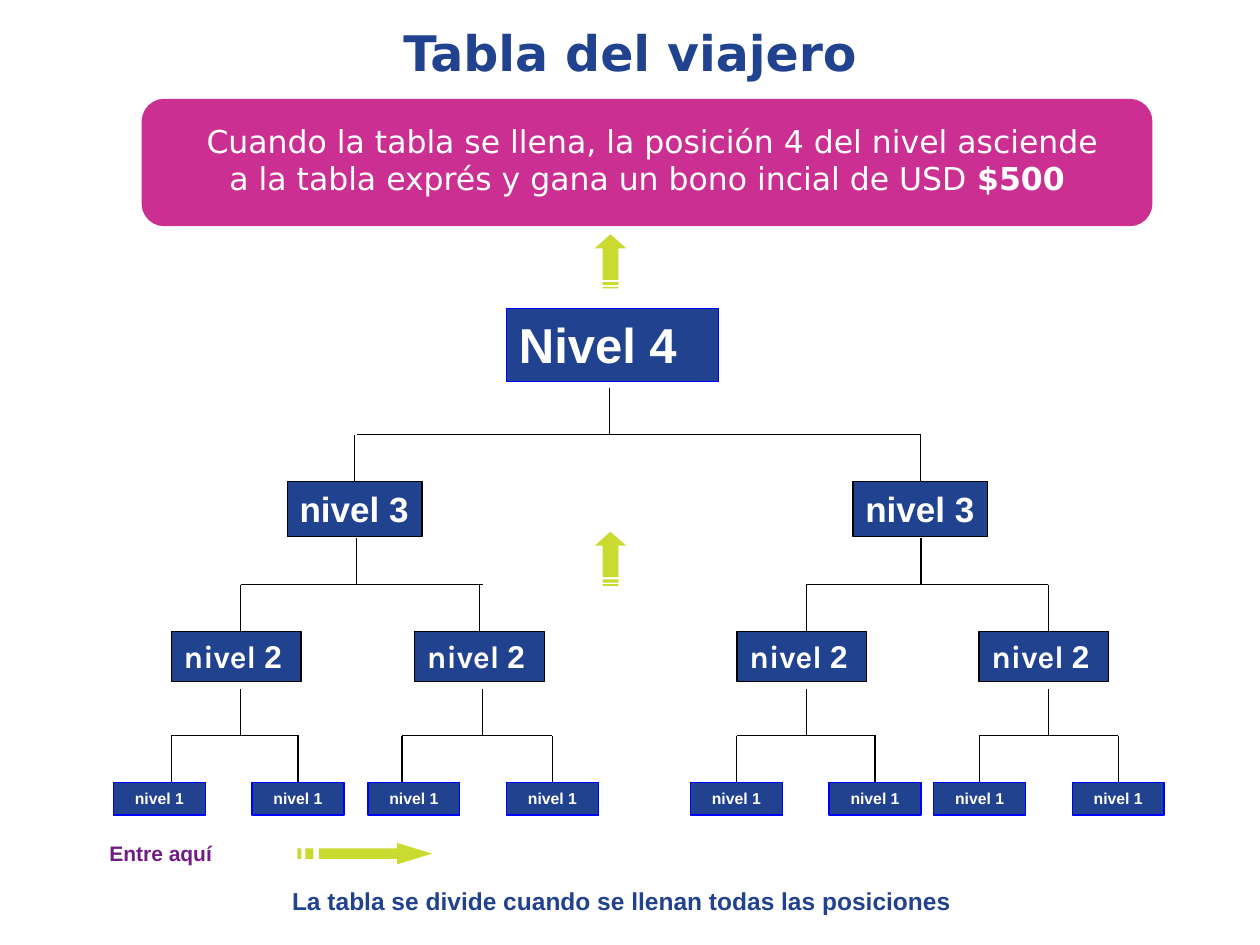
from dataclasses import dataclass

from lxml import etree
from pptx import Presentation
from pptx.dml.color import RGBColor
from pptx.enum.shapes import MSO_CONNECTOR as Connector, MSO_SHAPE as Shape
from pptx.enum.text import MSO_ANCHOR as Anchor, MSO_AUTO_SIZE as AutoSize, PP_ALIGN as Align
from pptx.oxml.ns import qn
from pptx.util import Inches, Pt

NAVY = RGBColor(0x21, 0x42, 0x8E)
MAGENTA = RGBColor(0xCB, 0x2F, 0x92)
LIME = RGBColor(0xCA, 0xDA, 0x30)
PURPLE = RGBColor(0x6F, 0x1D, 0x82)
BLUE = RGBColor(0x00, 0x00, 0xFF)
BLACK = RGBColor(0x00, 0x00, 0x00)
WHITE = RGBColor(0xFF, 0xFF, 0xFF)

RISE = 0.37
ARROW_PARTS = [
    [(0.74, 0), (0.74, 0.25), (0.16, 0.25), (0.16, 0.75), (0.74, 0.75), (0.74, 1), (1, 0.5)],
    [(0.06, 0.25), (0.06, 0.75), (0.12, 0.75), (0.12, 0.25)],
    [(0, 0.25), (0, 0.75), (0.03, 0.75), (0.03, 0.25)],
]


@dataclass
class Level:
    runs: list
    top: float
    width: float
    height: float
    size: int
    outline: RGBColor
    nodes: list
    align: Align = Align.LEFT
    wrap: bool = True


LEVELS = [
    Level([("Nivel 4", {})], 0, 1.68, 0.58, 28, BLUE, [(3.12, 3.94)]),
    Level([("nivel 3", {})], 1.37, 1.07, 0.44, 20, BLACK,
          [(1.38, 1.93), (5.87, 6.41)], wrap=False),
    Level([("nivel ", {"font": "Karla"}), ("2", {})], 2.56, 1.03, 0.4, 18, BLACK,
          [(0.46, 1.01), (2.39, 2.93), (4.95, 5.5), (6.87, 7.42)], wrap=False),
    Level([("nivel 1", {})], 3.76, 0.73, 0.26, 9, BLUE,
          [(0, 0.46), (1.1, 1.47), (2.02, 2.29), (3.12, 3.48),
           (4.58, 4.95), (5.68, 6.05), (6.51, 6.87), (7.61, 7.97)], align=Align.CENTER),
]


def write(shape, runs, size, color, font="Arial", bold=True,
          align=Align.CENTER, anchor=Anchor.TOP, wrap=True):
    frame = shape.text_frame
    frame.word_wrap = wrap
    frame.auto_size = AutoSize.SHAPE_TO_FIT_TEXT
    frame.vertical_anchor = anchor
    paragraph = frame.paragraphs[0]
    paragraph.alignment = align
    for text, changes in runs:
        run = paragraph.add_run()
        run.text = text
        run.font.size = Pt(size)
        run.font.color.rgb = color
        run.font.name = changes.get("font", font)
        run.font.bold = changes.get("bold", bold)


def add_text(slide, box, runs, size, color, **style):
    write(slide.shapes.add_textbox(*map(Inches, box)), runs, size, color, **style)


def add_box(slide, kind, box, fill, outline, line_width):
    shape = slide.shapes.add_shape(kind, *map(Inches, box))
    shape.shadow.inherit = False
    shape.fill.solid()
    shape.fill.fore_color.rgb = fill
    shape.line.color.rgb = outline
    shape.line.width = Pt(line_width)
    return shape


def add_line(slide, x1, y1, x2, y2):
    line = slide.shapes.add_connector(Connector.STRAIGHT, *map(Inches, (x1, y1, x2, y2)))
    line.line.color.rgb = BLACK
    line.line.width = Pt(0.75)
    properties = line._element.find(qn("p:spPr"))
    etree.SubElement(properties, qn("a:effectLst"))
    return line


def add_arrow(slide, box, upward=False):
    left, top, width, height = box

    def place(along, across):
        if upward:
            return Inches(left + across * width), Inches(top + (1 - along) * height)
        return Inches(left + along * width), Inches(top + across * height)

    builder = None
    for part in ARROW_PARTS:
        points = [place(*point) for point in part]
        if builder is None:
            builder = slide.shapes.build_freeform(*points[0])
        else:
            builder.move_to(*points[0])
        builder.add_line_segments(points[1:], close=True)
    arrow = builder.convert_to_shape()
    arrow.shadow.inherit = False
    arrow.fill.solid()
    arrow.fill.fore_color.rgb = LIME
    arrow.line.fill.background()


def add_banner(slide, box):
    left, top, width, height = box
    add_box(slide, Shape.FLOWCHART_ALTERNATE_PROCESS, box, MAGENTA, MAGENTA, 2.25)
    add_text(slide, (left + 0.32, top + 0.11, width - 0.55, height - 0.27),
             [("Cuando la tabla se llena, la posición 4 del nivel asciende a la tabla "
               "exprés y gana un bono incial de USD ", {}), ("$500 ", {"bold": True})],
             18, WHITE, font="DejaVu Sans", bold=False, anchor=Anchor.MIDDLE)


def add_level(slide, left, top, level):
    y = top + level.top
    for index, (node_left, stem) in enumerate(level.nodes):
        node = add_box(slide, Shape.RECTANGLE, (left + node_left, y, level.width, level.height),
                       NAVY, level.outline, 0.75)
        write(node, level.runs, level.size, WHITE, align=level.align, wrap=level.wrap)
        if level.top == 0:
            continue
        center = node_left + level.width / 2
        centered = abs(center - stem) < 0.03
        x = left + (center if centered else stem)
        line = add_line(slide, x, y - RISE, x, y)
        if centered:
            line.end_connect(node, 0)


def add_tree(slide, box):
    left, top, width, height = box
    for level in LEVELS:
        add_level(slide, left, top, level)
    for parents, children in zip(LEVELS, LEVELS[1:]):
        bus = top + children.top - RISE
        for index, (_, stem) in enumerate(parents.nodes):
            first, last = [child[1] for child in children.nodes[2 * index:2 * index + 2]]
            add_line(slide, left + stem, bus - RISE, left + stem, bus)
            add_line(slide, left + first, bus, left + last, bus)
    add_arrow(slide, (left + 3.82, top + 1.77, 0.25, 0.43), upward=True)


def add_footer(slide, box):
    left, top, width, height = box
    add_text(slide, (left, top, 1.08, 0.3), [("Entre aquí", {})], 12, PURPLE, align=Align.LEFT)
    add_arrow(slide, (left + 1.59, top + 0.07, 1.07, 0.17))
    add_text(slide, (left + 0.58, top + 0.36, width - 0.58, height - 0.36),
             [("La tabla se divide cuando se llenan todas las posiciones", {})], 14, NAVY)


def main():
    presentation = Presentation()
    presentation.slide_width = Inches(10)
    presentation.slide_height = Inches(7.5)
    slide = presentation.slides.add_slide(presentation.slide_layouts[6])
    add_text(slide, (0, 0.13, 10, 0.57), [("Tabla del viajero", {})], 28, NAVY,
             font="DejaVu Sans", anchor=Anchor.MIDDLE)
    add_banner(slide, (1.14, 0.8, 7.99, 0.98))
    add_arrow(slide, (4.72, 1.86, 0.25, 0.43), upward=True)
    add_tree(slide, (0.9, 2.45, 8.34, 4.02))
    add_footer(slide, (0.77, 6.62, 7.75, 0.7))
    presentation.save("out.pptx")


if __name__ == "__main__":
    main()
